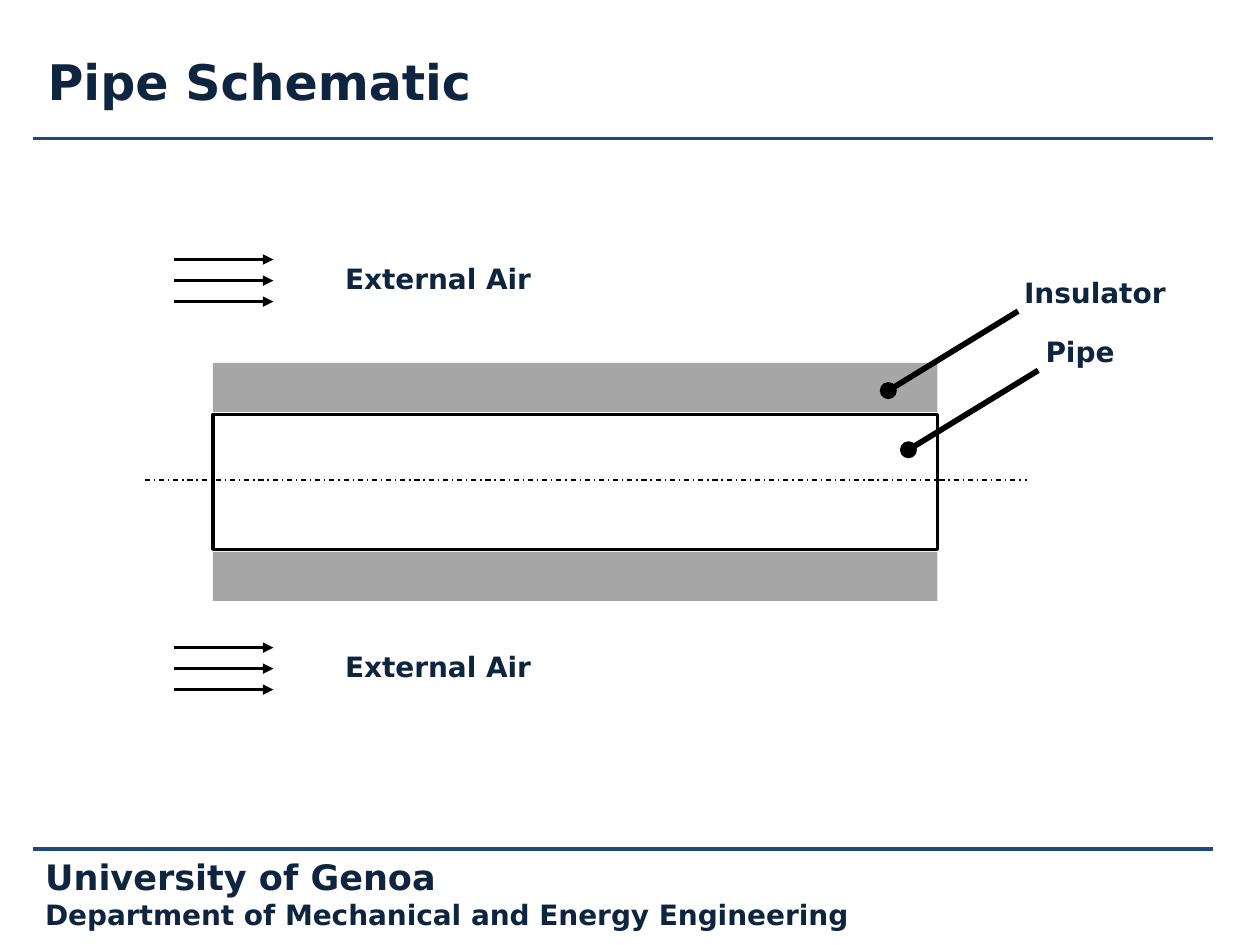
from lxml.etree import SubElement
from pptx import Presentation
from pptx.dml.color import RGBColor
from pptx.enum.dml import MSO_LINE
from pptx.enum.shapes import MSO_CONNECTOR, MSO_SHAPE
from pptx.enum.text import MSO_ANCHOR
from pptx.oxml.ns import qn
from pptx.util import Inches, Pt

COLORS = {"rule": "1F497D", "text": "0F243E", "insulator": "A6A6A6", "black": "000000"}
FONT = "DejaVu Sans"

presentation = Presentation()
presentation.slide_width = Inches(10)
presentation.slide_height = Inches(7.5)
slide = presentation.slides.add_slide(presentation.slide_layouts[6])


def add_text(lines, left, top, width, height, sizes=(16,), anchor=MSO_ANCHOR.TOP):
    """Add a bold text box with one paragraph, and one size, per line."""
    box = slide.shapes.add_textbox(Inches(left), Inches(top), Inches(width), Inches(height))
    frame = box.text_frame
    frame.word_wrap = True
    frame.vertical_anchor = anchor
    frame.text = "\n".join(lines)
    for paragraph, size in zip(frame.paragraphs, sizes):
        font = paragraph.runs[0].font
        font.name = FONT
        font.size = Pt(size)
        font.bold = True
        font.color.rgb = RGBColor.from_string(COLORS["text"])


def add_line(start, end, width, color="black", dash=None, head=None, tail=None):
    """Add a straight line; head is the marker at start, tail the one at end."""
    connector = slide.shapes.add_connector(
        MSO_CONNECTOR.STRAIGHT, *[Inches(value) for value in (*start, *end)])
    connector.line.color.rgb = RGBColor.from_string(COLORS[color])
    connector.line.width = Pt(width)
    if dash:
        connector.line.dash_style = dash
    properties = connector.element.spPr
    outline = properties.find(qn("a:ln"))
    for tag, marker in (("a:headEnd", head), ("a:tailEnd", tail)):
        if marker:
            SubElement(outline, qn(tag), type=marker)
    SubElement(properties, qn("a:effectLst"))


# Title and footer
for rule_y in (1.1, 6.74):
    add_line((0.26, rule_y), (9.63, rule_y), 2, color="rule")
add_text(["University of Genoa", "Department of Mechanical and Energy Engineering"],
         0.26, 6.84, 6.63, 0.5, sizes=(20, 16), anchor=MSO_ANCHOR.MIDDLE)
add_text(["Pipe Schematic"], 0.28, 0.29, 9.35, 0.71, sizes=(28,), anchor=MSO_ANCHOR.MIDDLE)

# Pipe between two insulator layers
for top, height, is_pipe in ((2.88, 0.39, False), (3.29, 1.07, True), (4.38, 0.39, False)):
    layer = slide.shapes.add_shape(
        MSO_SHAPE.RECTANGLE, Inches(1.69), Inches(top), Inches(5.75), Inches(height))
    layer.shadow.inherit = False
    if is_pipe:
        layer.fill.background()
        layer.line.color.rgb = RGBColor.from_string(COLORS["black"])
        layer.line.width = Pt(2)
    else:
        layer.fill.solid()
        layer.fill.fore_color.rgb = RGBColor.from_string(COLORS["insulator"])
        layer.line.fill.background()

# Pipe axis
add_line((1.15, 3.81), (8.15, 3.81), 0.75, dash=MSO_LINE.DASH_DOT)

# Callouts
for label, x, y, label_left, label_top, label_width in (
        ("Insulator", 7.05, 3.1, 8.03, 2.14, 1.54),
        ("Pipe", 7.21, 3.57, 8.2, 2.61, 1.26)):
    add_line((x, y), (x + 1.03, y - 0.63), 3.25, head="oval")
    add_text([label], label_left, label_top, label_width, 0.37)

# Air flow above and below the pipe
for flow_top in (2.06, 5.14):
    for index in range(3):
        arrow_y = flow_top + index * 0.167
        add_line((1.38, arrow_y), (2.17, arrow_y), 1.5, tail="triangle")
    add_text(["External Air"], 2.64, flow_top - 0.03, 2.36, 0.37)

presentation.save("out.pptx")
